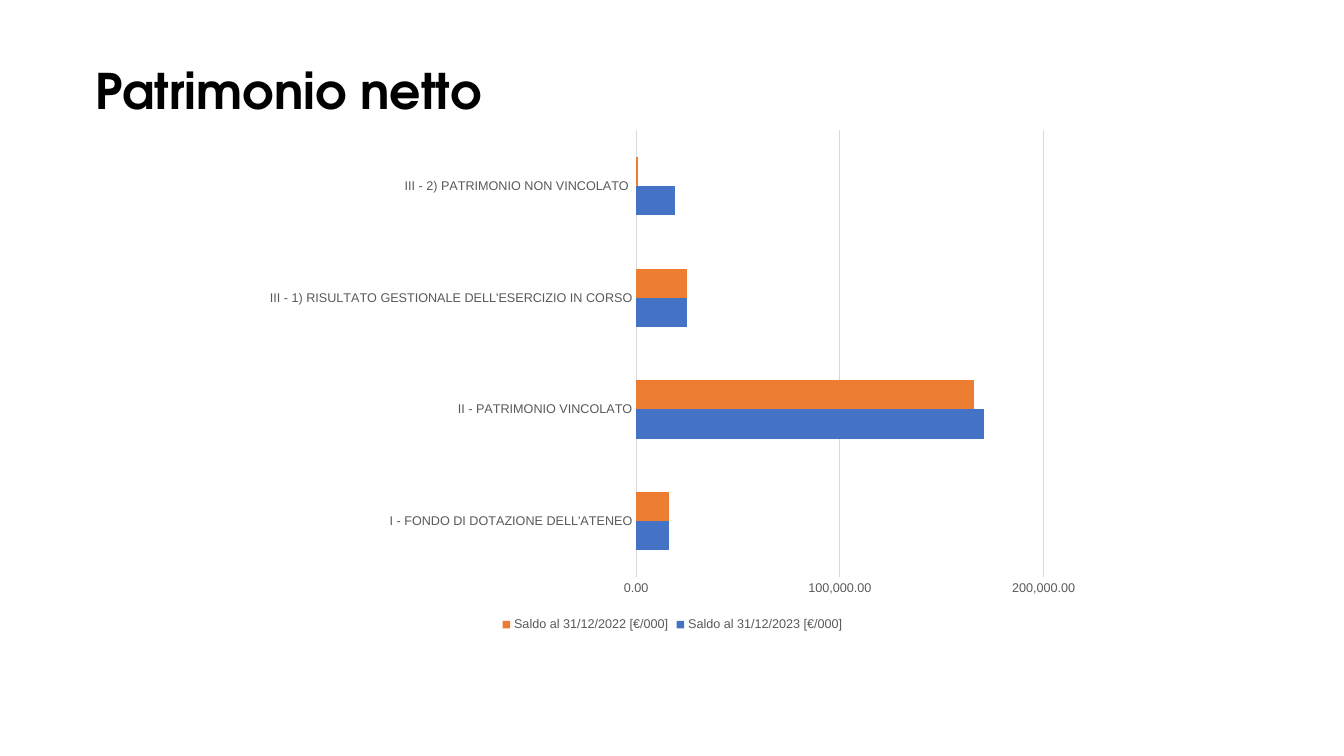
from dataclasses import dataclass
from pptx import Presentation
from pptx.chart.data import CategoryChartData
from pptx.dml.color import RGBColor
from pptx.enum.chart import XL_CHART_TYPE, XL_LEGEND_POSITION, XL_TICK_MARK
from pptx.enum.text import MSO_ANCHOR
from pptx.util import Inches, Pt


@dataclass(frozen=True)
class Theme:
    ink: str = "000000"
    soft: str = "595959"
    rule: str = "D9D9D9"
    bars: tuple = ("4472C4", "ED7D31")
    head: str = "TeX Gyre Adventor"
    body: str = "Arial"
    large: int = 35
    base: int = 10
    small: int = 9
    thin: float = 0.75


class Deck:
    """Draws styled elements on one slide, placed in inches on a 13.33 by 7.5 page."""

    def __init__(self, theme):
        self.theme = theme
        self.file = Presentation()
        self.file.slide_width = Inches(13.33)
        self.file.slide_height = Inches(7.5)
        self.slide = self.file.slides.add_slide(self.file.slide_layouts[6])

    def place(self, left, top, width, height):
        page = self.file.slide_width, self.file.slide_height
        shares = (left, top, width, height)
        return [int(share * page[i % 2]) for i, share in enumerate(shares)]

    def font(self, font, name, size, color, bold=False):
        font.name, font.size, font.bold = name, Pt(size), bold
        font.color.rgb = RGBColor.from_string(color)

    def line(self, line):
        line.color.rgb = RGBColor.from_string(self.theme.rule)
        line.width = Pt(self.theme.thin)

    def title(self, text, *area):
        look = self.theme
        frame = self.slide.shapes.add_textbox(*self.place(*area)).text_frame
        frame.word_wrap = True
        frame.vertical_anchor = MSO_ANCHOR.TOP
        para = frame.paragraphs[0]
        para.text = text
        para.line_spacing = 0.9
        self.font(para.font, look.head, look.large, look.ink, True)

    def chart(self, names, series, step, top, *area):
        look = self.theme
        data = CategoryChartData(number_format="#,##0.00######")
        data.categories = names
        for name, values in series.items():
            data.add_series(name, values)
        chart = self.slide.shapes.add_chart(
            XL_CHART_TYPE.BAR_CLUSTERED, *self.place(*area), data).chart
        self.font(chart.font, look.body, look.base, look.ink)
        chart.has_title = False
        chart.has_legend = True
        chart.legend.position = XL_LEGEND_POSITION.BOTTOM
        chart.legend.include_in_layout = False
        self.font(chart.legend.font, look.body, look.small, look.soft)

        for axis in (chart.category_axis, chart.value_axis):
            axis.major_tick_mark = axis.minor_tick_mark = XL_TICK_MARK.NONE
            self.font(axis.tick_labels.font, look.body, look.small, look.soft)
        self.line(chart.category_axis.format.line)
        scale = chart.value_axis
        scale.format.line.fill.background()
        scale.minimum_scale, scale.maximum_scale = 0, top
        scale.major_unit = step
        scale.has_major_gridlines = True
        self.line(scale.major_gridlines.format.line)
        scale.tick_labels.number_format = "#,##0.00######"
        scale.tick_labels.number_format_is_linked = False

        plot = chart.plots[0]
        plot.gap_width = 182
        plot.overlap = 0
        plot.vary_by_categories = False
        for item, color in zip(plot.series, look.bars):
            item.format.fill.solid()
            item.format.fill.fore_color.rgb = RGBColor.from_string(color)
            item.invert_if_negative = False


def main():
    deck = Deck(Theme())
    deck.title("Patrimonio netto", 0.0638, 0.0827, 0.874, 0.1453)
    deck.chart(
        ["I - FONDO DI DOTAZIONE DELL'ATENEO",
         "II - PATRIMONIO VINCOLATO",
         "III - 1) RISULTATO GESTIONALE DELL'ESERCIZIO IN CORSO",
         "III - 2) PATRIMONIO NON VINCOLATO "],
        {"Saldo al 31/12/2023 [€/000]": (16000, 171000, 25000, 19000),
         "Saldo al 31/12/2022 [€/000]": (16000, 166000, 25000, 1000)},
        100000, 200000, 0.1883, 0.1587, 0.6242, 0.6827)
    deck.file.save("out.pptx")


if __name__ == "__main__":
    main()
